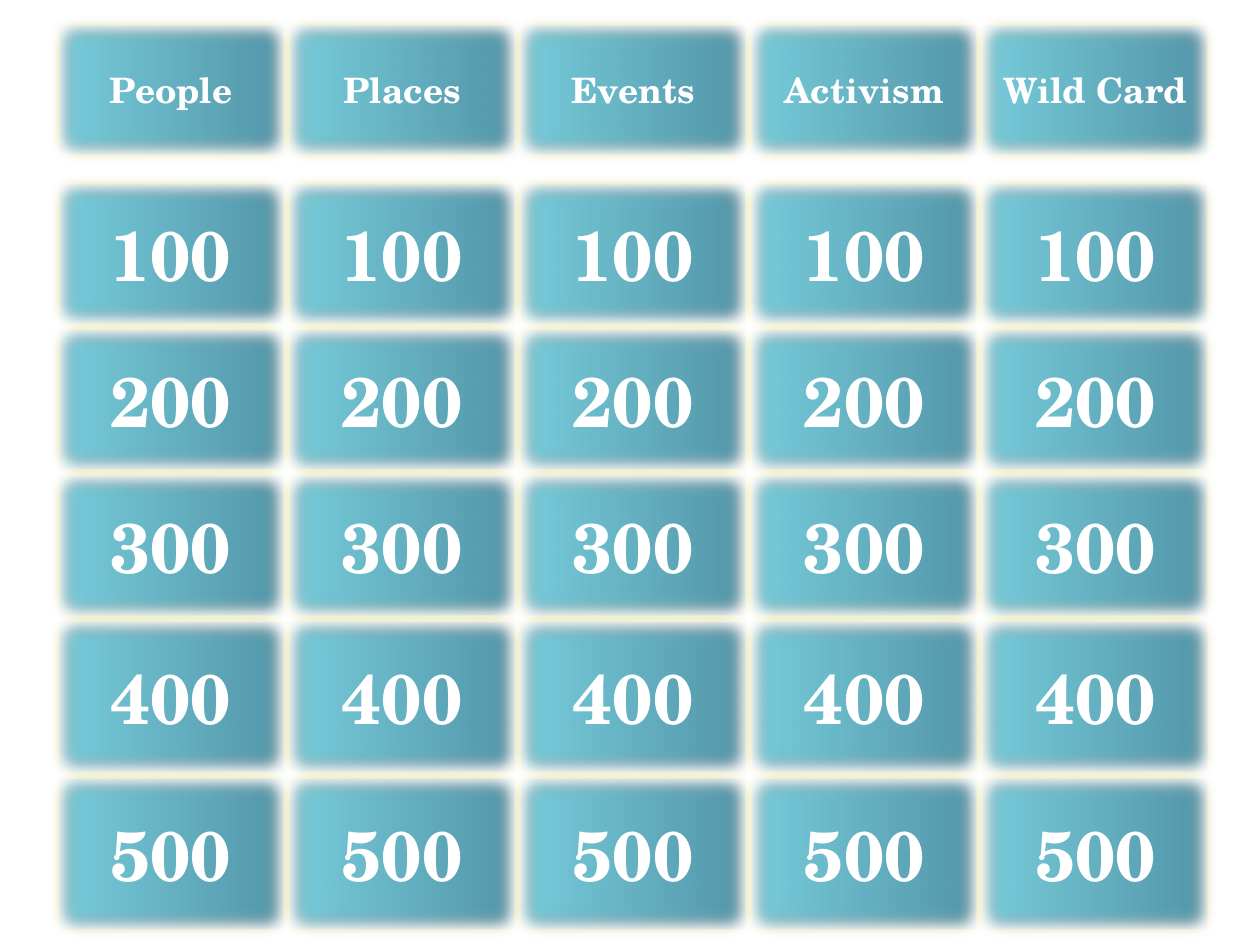
from dataclasses import dataclass

from lxml.etree import SubElement
from pptx import Presentation
from pptx.dml.color import RGBColor
from pptx.enum.shapes import MSO_SHAPE
from pptx.enum.text import MSO_ANCHOR, PP_ALIGN
from pptx.oxml.ns import qn
from pptx.util import Inches, Pt


@dataclass(frozen=True)
class Theme:
    font: str = "TeX Gyre Schola"
    text: str = "FFFFFF"
    tile_left: str = "78CFDD"
    tile_right: str = "5295A9"
    border: str = "FFFF00"
    shadow: str = "000000"
    border_width: float = 4.5
    category_size: int = 20
    points_size: int = 40


THEME = Theme()
CATEGORIES = ["People", "Places", "Events", "Activism", "Wild Card"]
# Points on a row of tiles and the height of that row in inches
POINT_ROWS = {"100": 1.16, "200": 1.16, "300": 1.16, "400": 1.24, "500": 1.25}


def write_text(frame, text, *, size, color=THEME.text, bold=True):
    frame.word_wrap = False
    frame.vertical_anchor = MSO_ANCHOR.MIDDLE
    paragraph = frame.paragraphs[0]
    paragraph.alignment = PP_ALIGN.CENTER
    run = paragraph.add_run()
    run.text = text
    run.font.name = THEME.font
    run.font.size = Pt(size)
    run.font.bold = bold
    run.font.color.rgb = RGBColor.from_string(color)


def add_effects(tile):
    """Give a tile an even dark glow and blurred edges."""
    tile.shadow.inherit = False
    effects = tile.element.spPr.find(qn("a:effectLst"))
    shadow = SubElement(effects, qn("a:outerShdw"), blurRad=str(Pt(5)),
                        dist="0", dir="0", rotWithShape="0")
    color = SubElement(shadow, qn("a:srgbClr"), val=THEME.shadow)
    SubElement(color, qn("a:alpha"), val="40000")
    SubElement(effects, qn("a:softEdge"), rad="112500")


def add_tile(slide, left, top, width, height, text, size):
    tile = slide.shapes.add_shape(MSO_SHAPE.ACTION_BUTTON_CUSTOM,
                                  left, top, width, height)
    tile.fill.gradient()
    tile.fill.gradient_angle = 0
    for stop, color in zip(tile.fill.gradient_stops,
                           (THEME.tile_left, THEME.tile_right)):
        stop.color.rgb = RGBColor.from_string(color)
    tile.line.color.rgb = RGBColor.from_string(THEME.border)
    tile.line.width = Pt(THEME.border_width)
    add_effects(tile)
    write_text(tile.text_frame, text, size=size)


def add_tile_row(slide, left, top, width, height, labels, size):
    tile_width = width // len(labels)
    for column, label in enumerate(labels):
        add_tile(slide, left + column * tile_width, top,
                 tile_width, height, label, size)


def add_points_board(slide, left, top, width):
    for points, row_height in POINT_ROWS.items():
        height = Inches(row_height)
        add_tile_row(slide, left, top, width, height,
                     [points] * len(CATEGORIES), THEME.points_size)
        top += height


def main():
    deck = Presentation()
    deck.slide_width, deck.slide_height = Inches(10), Inches(7.5)
    slide = deck.slides.add_slide(deck.slide_layouts[6])
    left, width = Inches(0.44), Inches(9.17)

    # Category headings
    add_tile_row(slide, left, Inches(0.17), width, Inches(1.08),
                 CATEGORIES, THEME.category_size)
    # Point values
    add_points_board(slide, left, Inches(1.43), width)

    deck.save("out.pptx")


if __name__ == "__main__":
    main()
